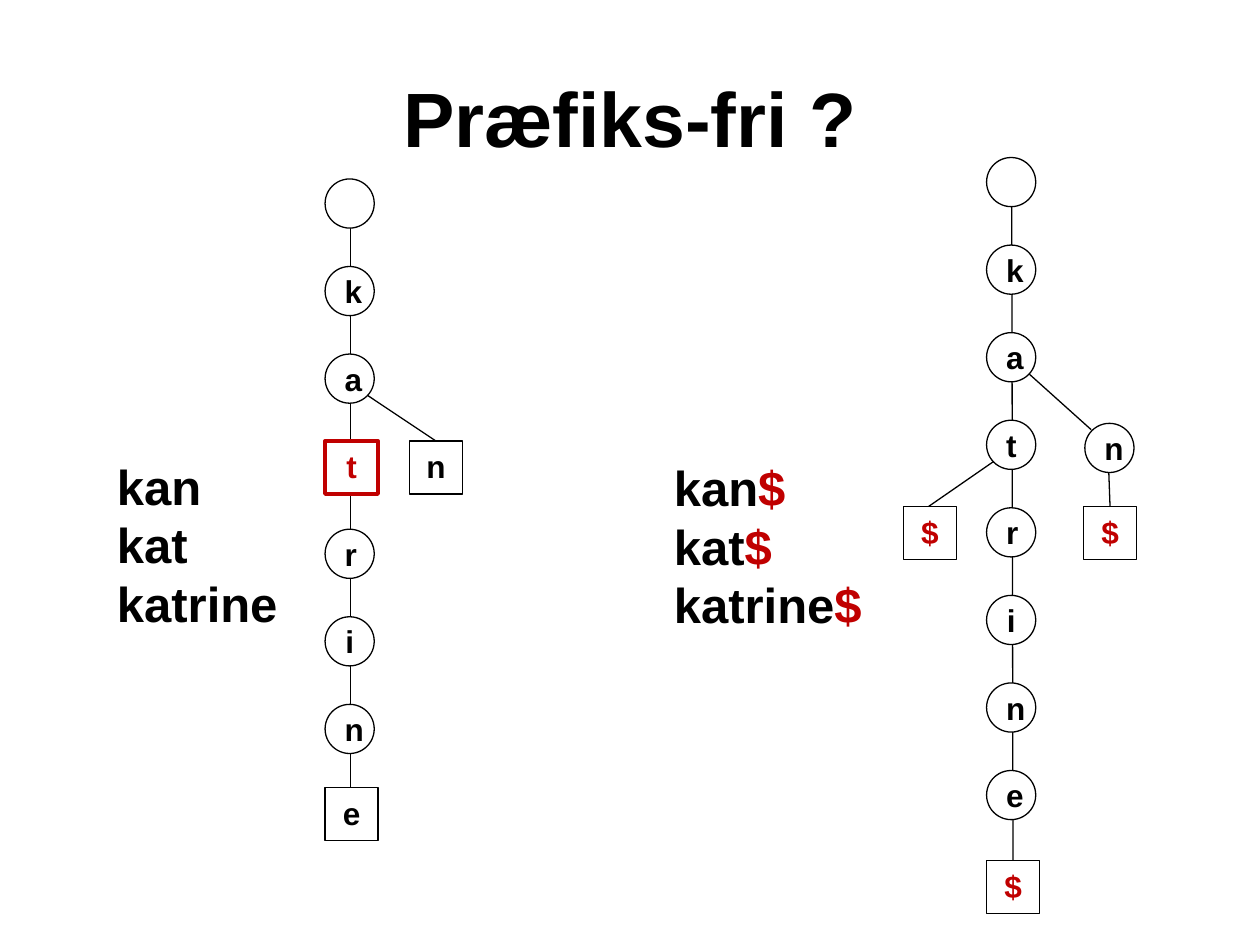
from pptx import Presentation
from pptx.dml.color import RGBColor
from pptx.enum.shapes import MSO_CONNECTOR, MSO_SHAPE
from pptx.enum.text import MSO_ANCHOR, MSO_AUTO_SIZE, PP_ALIGN
from pptx.oxml.ns import qn
from pptx.util import Inches, Pt
from lxml.etree import SubElement

THEME = {
    "font": "Arial",
    "ink": RGBColor(0, 0, 0),
    "mark": RGBColor(0xC0, 0, 0),
    "paper": RGBColor(255, 255, 255),
    "title": 44, "word": 28, "node": 18,
    "thin": 0.75, "thick": 2.25,
}
TITLE = "Præfiks-fri ?"
WORDS = ["kan", "kat", "katrine"]
LISTS = [(0.83, 3.57, ""), (5.25, 3.58, "$")]  # left, top, end mark

# chain: letters of the circles below the root, None where a leaf stands.
# leaves: letter, left, top, marked box. lines: from x, y, to x, y.
TREES = [
    {
        "left": 2.58, "top": 1.42,
        "chain": ["", "k", "a", None, "r", "i", "n"],
        "side": [],
        "leaves": [("n", 3.25, 3.5, False), ("t", 2.58, 3.5, True),
                   ("e", 2.58, 6.25, False)],
        "lines": [(2.78, 1.81, 2.78, 6.27), (2.92, 3.14, 3.46, 3.5)],
    },
    {
        "left": 7.83, "top": 1.25,
        "chain": ["", "k", "a", "t", "r", "i", "n", "e"],
        "side": [("n", 8.61, 3.36)],
        "leaves": [("$", 8.6, 4.02, False), ("$", 7.83, 6.83, False),
                   ("$", 7.17, 4.02, False)],
        "lines": [(8.03, 1.64, 8.04, 6.83), (7.89, 3.66, 7.37, 4.02),
                  (8.8, 3.75, 8.81, 4.02), (8.17, 2.97, 8.66, 3.41)],
    },
]
STEP = 0.69 + 0.005
ROUND, SQUARE = 0.39, 0.42


def style(run, size, color):
    font = run.font
    font.name, font.size, font.bold = THEME["font"], Pt(THEME[size]), True
    font.color.rgb = color


def add_line(group, x1, y1, x2, y2):
    line = group.shapes.add_connector(
        MSO_CONNECTOR.STRAIGHT, *map(Inches, (x1, y1, x2, y2)))
    line.line.color.rgb = THEME["ink"]
    line.line.width = Pt(THEME["thin"])
    SubElement(line._element.spPr, qn("a:effectLst"))


def add_node(group, kind, size, text, left, top, marked=False):
    node = group.shapes.add_shape(
        kind, *map(Inches, (left, top, size, size)))
    node.shadow.inherit = False
    node.fill.solid()
    node.fill.fore_color.rgb = THEME["paper"]
    node.line.color.rgb = THEME["mark" if marked else "ink"]
    node.line.width = Pt(THEME["thick" if marked else "thin"])
    if not text:
        return
    frame = node.text_frame
    frame.word_wrap = True
    frame.vertical_anchor = (
        MSO_ANCHOR.TOP if kind == MSO_SHAPE.RECTANGLE else MSO_ANCHOR.MIDDLE)
    para = frame.paragraphs[0]
    para.text = text
    para.alignment = PP_ALIGN.CENTER
    red = marked or text == "$"
    style(para.runs[0], "node", THEME["mark" if red else "ink"])


def add_tree(slide, tree):
    group = slide.shapes.add_group_shape()
    for ends in tree["lines"]:
        add_line(group, *ends)
    chain = [(text, tree["left"], tree["top"] + i * STEP)
             for i, text in enumerate(tree["chain"]) if text is not None]
    for node in chain + tree["side"]:
        add_node(group, MSO_SHAPE.OVAL, ROUND, *node)
    for leaf in tree["leaves"]:
        add_node(group, MSO_SHAPE.RECTANGLE, SQUARE, *leaf)


def add_words(slide, left, top, end):
    box = slide.shapes.add_textbox(*map(Inches, (left, top, 2.25, 1.51)))
    frame = box.text_frame
    frame.word_wrap = True
    frame.auto_size = MSO_AUTO_SIZE.SHAPE_TO_FIT_TEXT
    for i, word in enumerate(WORDS):
        para = frame.add_paragraph() if i else frame.paragraphs[0]
        for text, color in ((word, "ink"), (end, "mark")):
            if text:
                run = para.add_run()
                run.text = text
                style(run, "word", THEME[color])


def add_title(slide):
    title = slide.shapes.title
    title.left, title.top, title.width, title.height = map(
        Inches, (0.5, 0.3, 9, 1.25))
    frame = title.text_frame
    frame.text = TITLE
    frame.vertical_anchor = MSO_ANCHOR.MIDDLE
    frame.paragraphs[0].alignment = PP_ALIGN.CENTER
    style(frame.paragraphs[0].runs[0], "title", THEME["ink"])


def main():
    deck = Presentation()
    deck.slide_width, deck.slide_height = Inches(10), Inches(7.5)
    slide = deck.slides.add_slide(deck.slide_layouts[5])
    add_title(slide)
    for words in LISTS:
        add_words(slide, *words)
    for tree in TREES:
        add_tree(slide, tree)
    deck.save("out.pptx")


if __name__ == "__main__":
    main()
